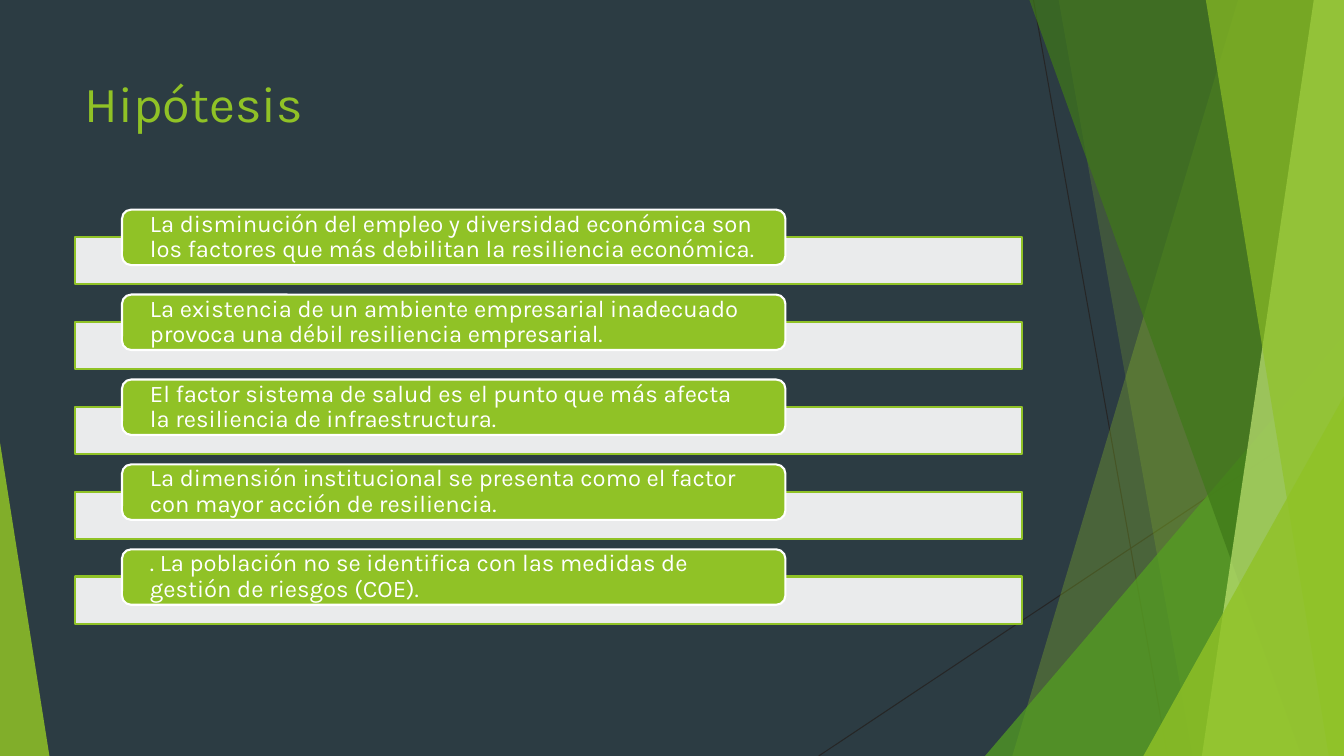
from lxml.etree import SubElement
from pptx import Presentation
from pptx.dml.color import RGBColor
from pptx.enum.shapes import MSO_CONNECTOR, MSO_SHAPE
from pptx.enum.text import MSO_ANCHOR, MSO_AUTO_SIZE, PP_ALIGN
from pptx.oxml.ns import qn
from pptx.util import Inches, Pt

COLORS = {
    "background": "2C3C43",
    "lime": "90C226",
    "green": "54A021",
    "forest": "3F7819",
    "pale": "C0E474",
    "ray": "262626",
    "white": "FFFFFF",
}
FONT = "Karla"
SLIDE_W, SLIDE_H = 13.33, 7.5

HYPOTHESES = [
    "La disminución del empleo y diversidad económica son los factores que más "
    "debilitan la resiliencia económica.",
    "La existencia de un ambiente empresarial inadecuado provoca una débil "
    "resiliencia empresarial.",
    "El factor sistema de salud es el punto que más afecta la resiliencia de "
    "infraestructura.",
    "La dimensión institucional se presenta como el factor con mayor acción de "
    "resiliencia.",
    ". La población no se identifica con las medidas de gestión de riesgos (COE).",
]
FIRST_TOP, LAST_TOP = 2.08, 5.45
BAR_DROP = 0.27


def rgb(name):
    return RGBColor.from_string(COLORS[name])


def paint(shape, color, opacity=100, outline=None):
    shape.shadow.inherit = False
    shape.fill.solid()
    shape.fill.fore_color.rgb = rgb(color)
    if opacity < 100:
        tint = shape.fill._xPr.find(qn("a:solidFill"))[0]
        SubElement(tint, qn("a:alpha")).set("val", str(opacity * 1000))
    if outline:
        shape.line.color.rgb = rgb(outline)
        shape.line.width = Pt(1.5)
    else:
        shape.line.fill.background()


def style_text(paragraph, size, color):
    paragraph.alignment = PP_ALIGN.LEFT
    for run in paragraph.runs:
        run.font.name = FONT
        run.font.size = Pt(size)
        run.font.color.rgb = rgb(color)


def add_ray(slide, x1, y1, x2, y2):
    ray = slide.shapes.add_connector(
        MSO_CONNECTOR.STRAIGHT, Inches(x1), Inches(y1), Inches(x2), Inches(y2))
    ray.line.color.rgb = rgb("ray")
    ray.line.width = Pt(0.75)
    SubElement(ray._element.spPr, qn("a:effectLst"))


def add_facet(slide, top_x, bottom_x, color, opacity):
    """Full-height panel with a slanted left edge, reaching the right border."""
    corners = [(SLIDE_W, 0), (SLIDE_W, SLIDE_H), (bottom_x, SLIDE_H)]
    outline = slide.shapes.build_freeform(Inches(top_x), 0)
    outline.add_line_segments([(Inches(x), Inches(y)) for x, y in corners])
    paint(outline.convert_to_shape(), color, opacity)


def add_corner(slide, left, width, height, apex, color, opacity):
    """Right triangle standing on the bottom border."""
    corner = slide.shapes.add_shape(
        MSO_SHAPE.ISOSCELES_TRIANGLE, Inches(left), Inches(SLIDE_H - height),
        Inches(width), Inches(height))
    corner.adjustments[0] = apex
    paint(corner, color, opacity)


def add_backdrop(slide):
    slide.background.fill.solid()
    slide.background.fill.fore_color.rgb = rgb("background")
    add_ray(slide, 10.25, 0, 11.58, SLIDE_H)
    add_ray(slide, SLIDE_W, 4.03, 8.12, SLIDE_H)
    add_facet(slide, 12.28, 10.04, "lime", 30)
    add_facet(slide, 10.5, 11.83, "lime", 20)
    add_corner(slide, 9.77, 3.56, 4.17, 1, "green", 72)
    add_facet(slide, 10.21, 12.91, "forest", 70)
    add_facet(slide, 13.03, 11.92, "pale", 70)
    add_facet(slide, 11.96, 13.18, "lime", 65)
    add_corner(slide, 11.34, 1.99, 3.57, 1, "lime", 80)
    add_corner(slide, 0, 0.49, 3.11, 0, "lime", 85)


def set_title(slide, text):
    title = slide.shapes.title
    title.left, title.top = Inches(0.74), Inches(0.67)
    title.width, title.height = Inches(9.4), Inches(1.44)
    frame = title.text_frame
    frame.text = text
    frame.auto_size = MSO_AUTO_SIZE.NONE
    frame.vertical_anchor = MSO_ANCHOR.TOP
    style_text(frame.paragraphs[0], 36, "lime")


def add_hypothesis(slide, top, text):
    bar = slide.shapes.add_shape(
        MSO_SHAPE.RECTANGLE, Inches(0.74), Inches(top + BAR_DROP),
        Inches(9.4), Inches(0.47))
    paint(bar, "white", 90, outline="lime")

    card = slide.shapes.add_shape(
        MSO_SHAPE.ROUNDED_RECTANGLE, Inches(1.21), Inches(top),
        Inches(6.58), Inches(0.55))
    paint(card, "lime", outline="white")
    frame = card.text_frame
    frame.text = text
    frame.word_wrap = True
    frame.vertical_anchor = MSO_ANCHOR.MIDDLE
    # The rounded outline already insets the text by about 0.03
    frame.margin_left = frame.margin_right = Inches(0.25)
    frame.margin_top = frame.margin_bottom = 0
    frame.paragraphs[0].line_spacing = 0.9
    style_text(frame.paragraphs[0], 17, "white")


def main():
    deck = Presentation()
    deck.slide_width, deck.slide_height = Inches(SLIDE_W), Inches(SLIDE_H)
    slide = deck.slides.add_slide(deck.slide_layouts[5])

    add_backdrop(slide)
    set_title(slide, "Hipótesis")

    # Evenly spaced hypotheses
    pitch = (LAST_TOP - FIRST_TOP) / (len(HYPOTHESES) - 1)
    for row, text in enumerate(HYPOTHESES):
        add_hypothesis(slide, FIRST_TOP + row * pitch, text)

    deck.save("out.pptx")


if __name__ == "__main__":
    main()
